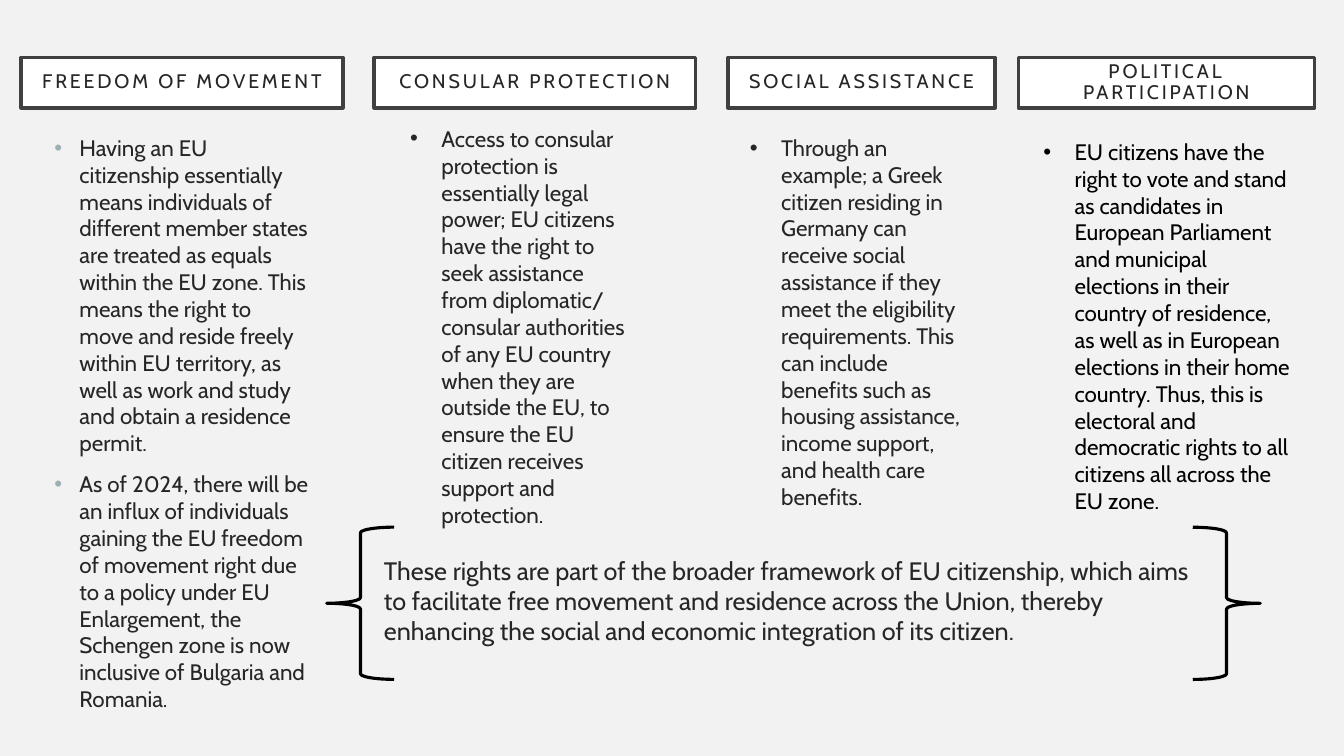
from dataclasses import dataclass

from lxml.etree import SubElement
from pptx import Presentation
from pptx.dml.color import RGBColor
from pptx.enum.shapes import MSO_SHAPE
from pptx.enum.text import MSO_ANCHOR, PP_ALIGN
from pptx.oxml.ns import qn
from pptx.shapes.autoshape import Shape
from pptx.slide import Slide
from pptx.text.text import TextFrame, _Paragraph
from pptx.util import Emu, Pt

EMU_PER_PX = 9144
FONT = "Cabin"
INK, BLACK, WHITE = "262626", "000000", "FFFFFF"
BACKGROUND, BORDER, PALE_BULLET = "F2F2F2", "404040", "9BAFB5"
HEADING_TOP, HEADING_HEIGHT, HEADING_INSET = 57, 50, 18
BRACE_TOP, BRACE_WIDTH, BRACE_HEIGHT = 523, 67, 151


@dataclass(frozen=True)
class Box:
    left: int
    top: int
    width: int
    height: int

    def emu(self) -> tuple[Emu, Emu, Emu, Emu]:
        return px(self.left), px(self.top), px(self.width), px(self.height)


@dataclass(frozen=True)
class Right:
    """One column: a framed heading over bulleted text."""
    heading: str
    heading_left: int
    heading_width: int
    body: Box
    points: tuple[str, ...]
    indent: int = 31
    color: str = INK
    bullet_color: str = INK


RIGHTS = (
    Right("FREEDOM OF MOVEMENT", 21, 319, Box(44, 128, 273, 503), (
        "Having an EU citizenship essentially means individuals of different "
        "member states are treated as equals within the EU zone. This means "
        "the right to move and reside freely within EU territory, as well as "
        "work and study and obtain a residence permit.",
        "As of 2024, there will be an influx of individuals gaining the EU "
        "freedom of movement right due to a policy under EU Enlargement, the "
        "Schengen zone is now inclusive of Bulgaria and Romania.",
    ), indent=25, bullet_color=PALE_BULLET),
    Right("CONSULAR PROTECTION", 371, 319, Box(397, 119, 236, 387), (
        "Access to consular protection is essentially legal power; EU citizens "
        "have the right to seek assistance from diplomatic/ consular "
        "authorities of any EU country when they are outside the EU, to ensure "
        "the EU citizen receives support and protection.",
    )),
    Right("SOCIAL ASSISTANCE", 722, 265, Box(734, 128, 236, 360), (
        "Through an example; a Greek citizen residing in Germany can receive "
        "social assistance if they meet the eligibility requirements. This can "
        "include benefits such as housing assistance, income support, and "
        "health care benefits.",
    )),
    Right("POLITICAL PARTICIPATION", 1010, 294, Box(1025, 132, 265, 360), (
        "EU citizens have the right to vote and stand as candidates in European "
        "Parliament and municipal elections in their country of residence, as "
        "well as in European elections in their home country. Thus, this is "
        "electoral and democratic rights to all citizens all across the EU "
        "zone.",
    ), color=BLACK, bullet_color=BLACK),
)
SUMMARY = (
    "These rights are part of the broader framework of EU citizenship, which "
    "aims to facilitate free movement and residence across the Union, thereby "
    "enhancing the social and economic integration of its citizen."
)


def px(length: int) -> Emu:
    return Emu(length * EMU_PER_PX)


def rgb(value: str) -> RGBColor:
    return RGBColor.from_string(value)


def add_bullet(paragraph: _Paragraph, indent: int, color: str) -> None:
    properties = paragraph._p.get_or_add_pPr()
    properties.set("marL", str(px(indent)))
    properties.set("indent", str(-px(indent)))
    bullet_color = SubElement(properties, qn("a:buClr"))
    SubElement(bullet_color, qn("a:srgbClr"), val=color)
    SubElement(properties, qn("a:buFont"), typeface="Arial")
    SubElement(properties, qn("a:buChar"), char="•")


def write(frame: TextFrame, *texts: str, size: int, color: str = INK,
          align: PP_ALIGN = PP_ALIGN.LEFT, line_spacing: float = 1.0,
          gap: int = 10, tracking: int = 0, indent: int = 0,
          bullet_color: str = "") -> None:
    """Write one paragraph per text; gap and tracking are in points."""
    frame.word_wrap = True
    for index, text in enumerate(texts):
        paragraph = frame.add_paragraph() if index else frame.paragraphs[0]
        if bullet_color:
            add_bullet(paragraph, indent, bullet_color)
        paragraph.alignment = align
        paragraph.line_spacing = line_spacing
        if index:
            paragraph.space_before = Pt(gap)
        run = paragraph.add_run()
        run.text = text
        run.font.name = FONT
        run.font.size = Pt(size)
        run.font.color.rgb = rgb(color)
        if tracking:
            run._r.get_or_add_rPr().set("spc", str(tracking * 100))


def add_outlined(slide: Slide, kind: MSO_SHAPE, box: Box, line: str,
                 weight: float, fill: str = "") -> Shape:
    shape = slide.shapes.add_shape(kind, *box.emu())
    shape.shadow.inherit = False
    if fill:
        shape.fill.solid()
        shape.fill.fore_color.rgb = rgb(fill)
    else:
        shape.fill.background()
    shape.line.color.rgb = rgb(line)
    shape.line.width = Pt(weight)
    return shape


def add_right(slide: Slide, right: Right) -> None:
    box = Box(right.heading_left, HEADING_TOP, right.heading_width, HEADING_HEIGHT)
    heading = add_outlined(slide, MSO_SHAPE.RECTANGLE, box, BORDER, 2.5, WHITE)
    frame = heading.text_frame
    frame.vertical_anchor = MSO_ANCHOR.MIDDLE
    frame.margin_left = frame.margin_right = px(HEADING_INSET)
    frame.margin_top = frame.margin_bottom = 0
    write(frame, right.heading, size=14, align=PP_ALIGN.CENTER,
          line_spacing=0.9, tracking=2)
    body = slide.shapes.add_textbox(*right.body.emu())
    write(body.text_frame, *right.points, size=16, color=right.color,
          indent=right.indent, bullet_color=right.bullet_color)


def add_summary(slide: Slide) -> None:
    summary = slide.shapes.add_textbox(*Box(371, 546, 845, 105).emu())
    write(summary.text_frame, SUMMARY, size=18)
    for left, rotation in ((324, 0), (1183, 180)):
        box = Box(left, BRACE_TOP, BRACE_WIDTH, BRACE_HEIGHT)
        brace = add_outlined(slide, MSO_SHAPE.LEFT_BRACE, box, BLACK, 2.25)
        brace.rotation = rotation


def main() -> None:
    presentation = Presentation()
    presentation.slide_width, presentation.slide_height = px(1333), px(750)
    slide = presentation.slides.add_slide(presentation.slide_layouts[6])
    slide.background.fill.solid()
    slide.background.fill.fore_color.rgb = rgb(BACKGROUND)
    for right in RIGHTS:
        add_right(slide, right)
    add_summary(slide)
    presentation.save("out.pptx")


if __name__ == "__main__":
    main()
